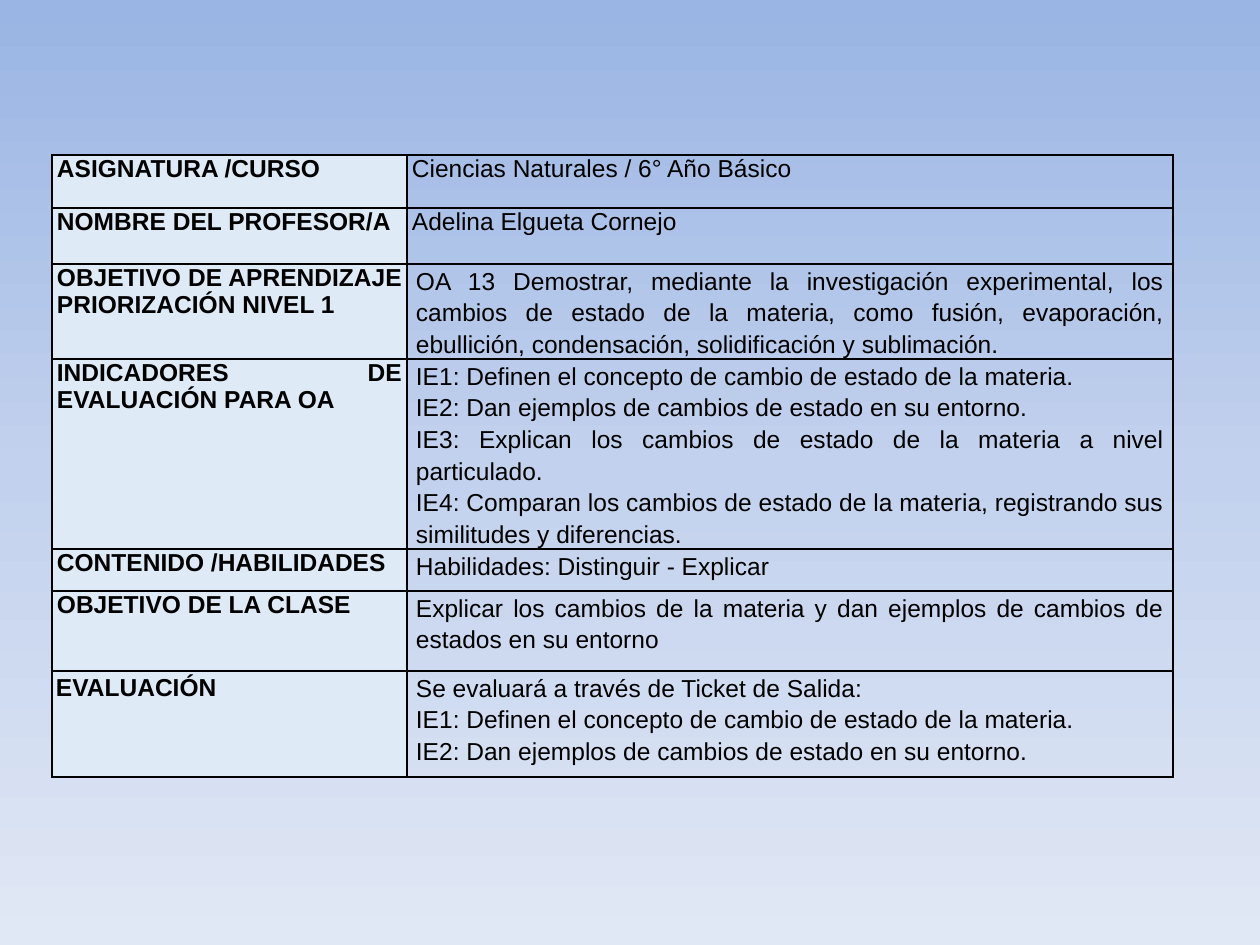
from copy import deepcopy

from lxml.etree import SubElement
from pptx import Presentation
from pptx.dml.color import RGBColor as Rgb
from pptx.enum.text import PP_ALIGN as Align
from pptx.oxml.ns import qn
from pptx.util import Pt

PX = 914400 / 126
COLORS = {
    "sky": "9AB5E4",
    "haze": "C2D1ED",
    "mist": "E1E8F5",
    "label": "DEEAF6",
    "ink": "000000",
}
COLUMN_WIDTHS = [355, 766]
LABEL_INSETS = (5, 0)
DETAIL_INSETS = (9, 0)
INDICATORS = [
    "IE1: Definen el concepto de cambio de estado de la materia.",
    "IE2: Dan ejemplos de cambios de estado en su entorno.",
]
PLAN = [
    (53, "ASIGNATURA /CURSO", ["Ciencias Naturales / 6° Año Básico"]),
    (56, "NOMBRE DEL PROFESOR/A", ["Adelina Elgueta Cornejo"]),
    (95, "OBJETIVO DE APRENDIZAJE PRIORIZACIÓN NIVEL 1", [
        "OA 13 Demostrar, mediante la investigación experimental, los cambios "
        "de estado de la materia, como fusión, evaporación, ebullición, "
        "condensación, solidificación y sublimación."]),
    (190, "INDICADORES DE EVALUACIÓN PARA OA", INDICATORS + [
        "IE3: Explican los cambios de estado de la materia a nivel particulado.",
        "IE4: Comparan los cambios de estado de la materia, registrando sus "
        "similitudes y diferencias."]),
    (42, "CONTENIDO /HABILIDADES", ["Habilidades: Distinguir - Explicar"]),
    (80, "OBJETIVO DE LA CLASE", [
        "Explicar los cambios de la materia y dan ejemplos de cambios de "
        "estados en su entorno"]),
    (106, "EVALUACIÓN",
     ["Se evaluará a través de Ticket de Salida:"] + INDICATORS),
]


def px(length):
    return round(length * PX)


def color(name):
    return Rgb.from_string(COLORS[name])


def paint_background(slide):
    fill = slide.background.fill
    fill.gradient()
    fill.gradient_angle = 270
    stop_list = slide.element.find(".//" + qn("a:gsLst"))
    stop_list.insert(1, deepcopy(stop_list[0]))
    shades = [(0, "sky"), (0.5, "haze"), (1, "mist")]
    for stop, (position, shade) in zip(fill.gradient_stops, shades):
        stop.position = position
        stop.color.rgb = color(shade)


def add_borders(cell):
    properties = cell._tc.get_or_add_tcPr()
    for side in ("a:lnL", "a:lnR", "a:lnT", "a:lnB"):
        border = SubElement(properties, qn(side), w=str(Pt(1)))
        solid = SubElement(border, qn("a:solidFill"))
        SubElement(solid, qn("a:srgbClr"), val=COLORS["ink"])


def write_cell(cell, lines, insets, bold=False, spacing=None):
    cell.margin_left = cell.margin_right = px(insets[0])
    cell.margin_top = cell.margin_bottom = px(insets[1])
    add_borders(cell)
    cell.text_frame.text = "\n".join(lines)
    for paragraph in cell.text_frame.paragraphs:
        paragraph.alignment = Align.JUSTIFY
        paragraph.line_spacing = spacing
        for run in paragraph.runs:
            run.font.name = "Arial"
            run.font.size = Pt(14)
            run.font.bold = bold
            run.font.color.rgb = color("ink")


def add_plan(slide, left, top):
    heights = [height for height, _, _ in PLAN]
    frame = slide.shapes.add_table(
        len(PLAN), len(COLUMN_WIDTHS), px(left), px(top),
        px(sum(COLUMN_WIDTHS)), px(sum(heights)))
    table = frame.table
    table.first_row = table.horz_banding = False
    for column, width in zip(table.columns, COLUMN_WIDTHS):
        column.width = px(width)
    for index, (height, label, details) in enumerate(PLAN):
        table.rows[index].height = px(height)
        label_cell, detail_cell = table.rows[index].cells
        label_insets = (4, 3) if label == "EVALUACIÓN" else LABEL_INSETS
        write_cell(label_cell, [label], label_insets, bold=True)
        label_cell.fill.solid()
        label_cell.fill.fore_color.rgb = color("label")
        if index < 2:
            write_cell(detail_cell, details, LABEL_INSETS)
        else:
            write_cell(detail_cell, details, DETAIL_INSETS, spacing=1.15)
        detail_cell.fill.background()


def main():
    deck = Presentation()
    deck.slide_width, deck.slide_height = px(1260), px(945)
    slide = deck.slides.add_slide(deck.slide_layouts[6])
    paint_background(slide)
    add_plan(slide, 52, 155)
    deck.save("out.pptx")


if __name__ == "__main__":
    main()
